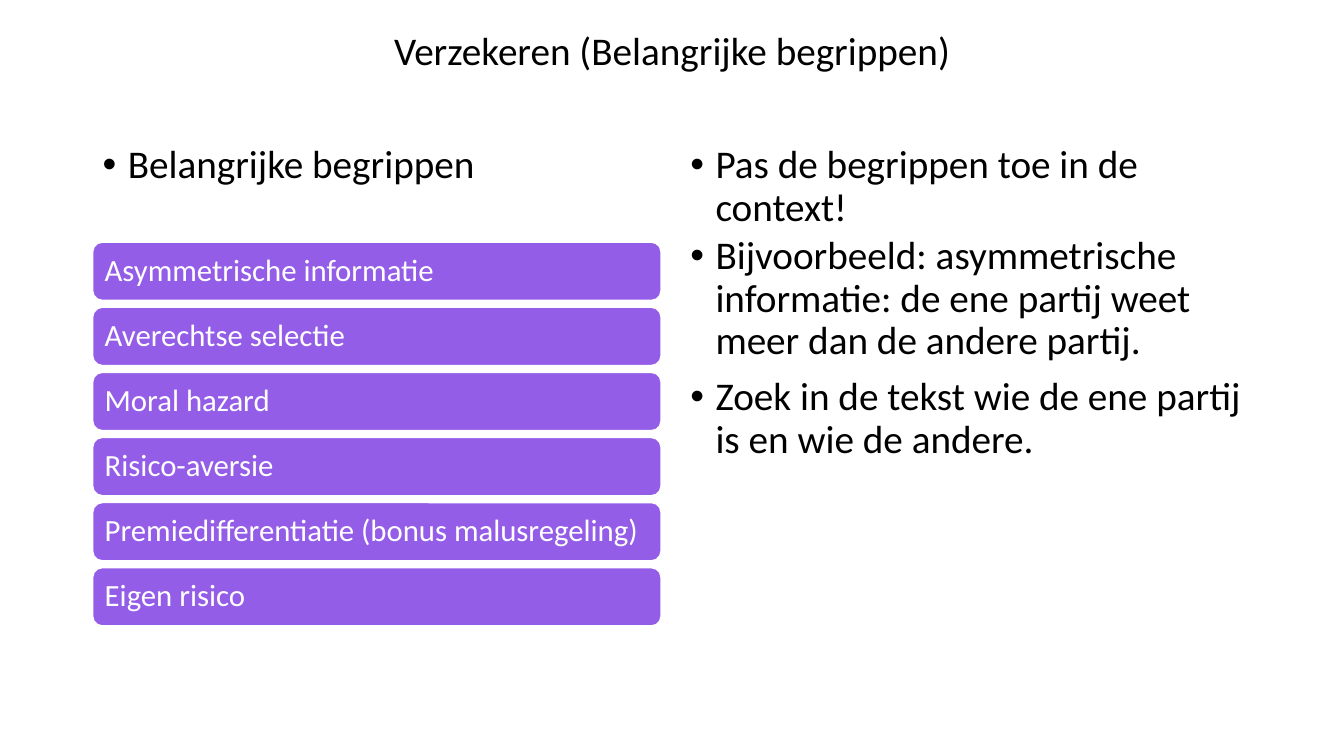
from dataclasses import dataclass

from lxml import etree
from pptx import Presentation
from pptx import util as u
from pptx.dml.color import RGBColor
from pptx.enum import shapes, text
from pptx.oxml import ns


@dataclass(frozen=True)
class Theme:
    font: str = "Calibri"
    ink: RGBColor = RGBColor(0x00, 0x00, 0x00)
    paper: RGBColor = RGBColor(0xFF, 0xFF, 0xFF)
    accent: RGBColor = RGBColor(0x94, 0x5D, 0xE8)
    body_size: int = 28
    term_size: int = 22
    line_spacing: float = 0.9
    bullet_gap: int = 10
    bullet_indent: int = 18


class PageBuilder:
    def __init__(self, page, theme):
        self.page = page
        self.theme = theme

    def add_span(self, para, words, size, color):
        span = para.add_run()
        span.text = words
        span.font.name = self.theme.font
        span.font.size = u.Pt(size)
        span.font.color.rgb = color

    def add_box(self, left, top, width, height):
        box = self.page.shapes.add_textbox(*map(u.Pt, (left, top, width, height)))
        box.text_frame.word_wrap = True
        return box.text_frame

    def add_title(self, words, left, top, width, height):
        para = self.add_box(left, top, width, height).paragraphs[0]
        para.alignment = text.PP_ALIGN.CENTER
        self.add_span(para, words, self.theme.body_size, self.theme.ink)

    def add_bullets(self, items, left, top, width, height):
        frame = self.add_box(left, top, width, height)
        for index, words in enumerate(items):
            para = frame.add_paragraph() if index else frame.paragraphs[0]
            para.line_spacing = self.theme.line_spacing
            if index:
                para.space_before = u.Pt(self.theme.bullet_gap)
            properties = para._p.get_or_add_pPr()
            indent = u.Pt(self.theme.bullet_indent)
            properties.set("marL", str(indent))
            properties.set("indent", str(-indent))
            etree.SubElement(properties, ns.qn("a:buFont"), typeface="Arial")
            etree.SubElement(properties, ns.qn("a:buChar"), char="•")
            self.add_span(para, words, self.theme.body_size, self.theme.ink)

    def add_term(self, words, left, top, width, height):
        bar = self.page.shapes.add_shape(
            shapes.MSO_SHAPE.ROUNDED_RECTANGLE,
            *map(u.Pt, (left, top, width, height)),
        )
        bar.shadow.inherit = False
        bar.fill.solid()
        bar.fill.fore_color.rgb = self.theme.accent
        bar.line.color.rgb = self.theme.paper
        bar.line.width = u.Pt(1)
        frame = bar.text_frame
        frame.word_wrap = True
        frame.vertical_anchor = text.MSO_ANCHOR.MIDDLE
        frame.margin_left = frame.margin_right = u.Pt(6.6)
        para = frame.paragraphs[0]
        para.alignment = text.PP_ALIGN.LEFT
        para.line_spacing = self.theme.line_spacing
        self.add_span(para, words, self.theme.term_size, self.theme.paper)


TERMS = [
    "Asymmetrische informatie",
    "Averechtse selectie",
    "Moral hazard",
    "Risico-aversie",
    "Premiedifferentiatie (bonus malusregeling)",
    "Eigen risico",
]
EXPLANATION = [
    "Bijvoorbeeld: asymmetrische informatie: de ene partij weet meer dan de andere partij.",
    "Zoek in de tekst wie de ene partij is en wie de andere.",
]


def main():
    deck = Presentation()
    deck.slide_width, deck.slide_height = u.Pt(960), u.Pt(540)
    builder = PageBuilder(deck.slides.add_slide(deck.slide_layouts[6]), Theme())

    left, left_width = 66.2, 406
    right, right_width = 486, 408
    heading_top, heading_height = 100, 65
    terms_top, term_height, term_pitch = 173, 41.6, 46.5

    builder.add_title("Verzekeren (Belangrijke begrippen)", 168.5, 15, 623, 41)
    builder.add_bullets(
        ["Belangrijke begrippen"], left, heading_top, left_width, heading_height
    )
    for row, term in enumerate(TERMS):
        builder.add_term(
            term, left, terms_top + row * term_pitch, left_width, term_height
        )
    builder.add_bullets(
        ["Pas de begrippen toe in de context!"],
        right, heading_top, right_width, heading_height,
    )
    builder.add_bullets(
        EXPLANATION, right, heading_top + heading_height, right_width, 290
    )
    deck.save("out.pptx")


if __name__ == "__main__":
    main()
